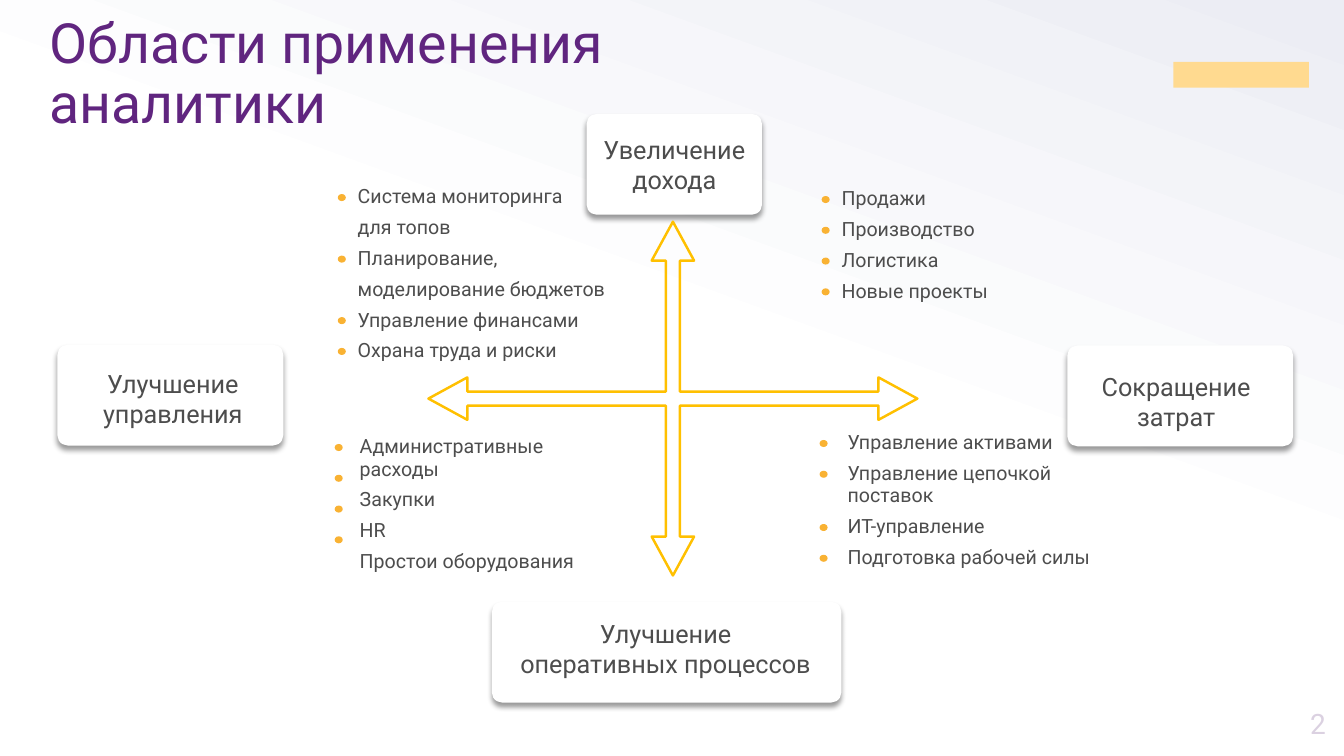
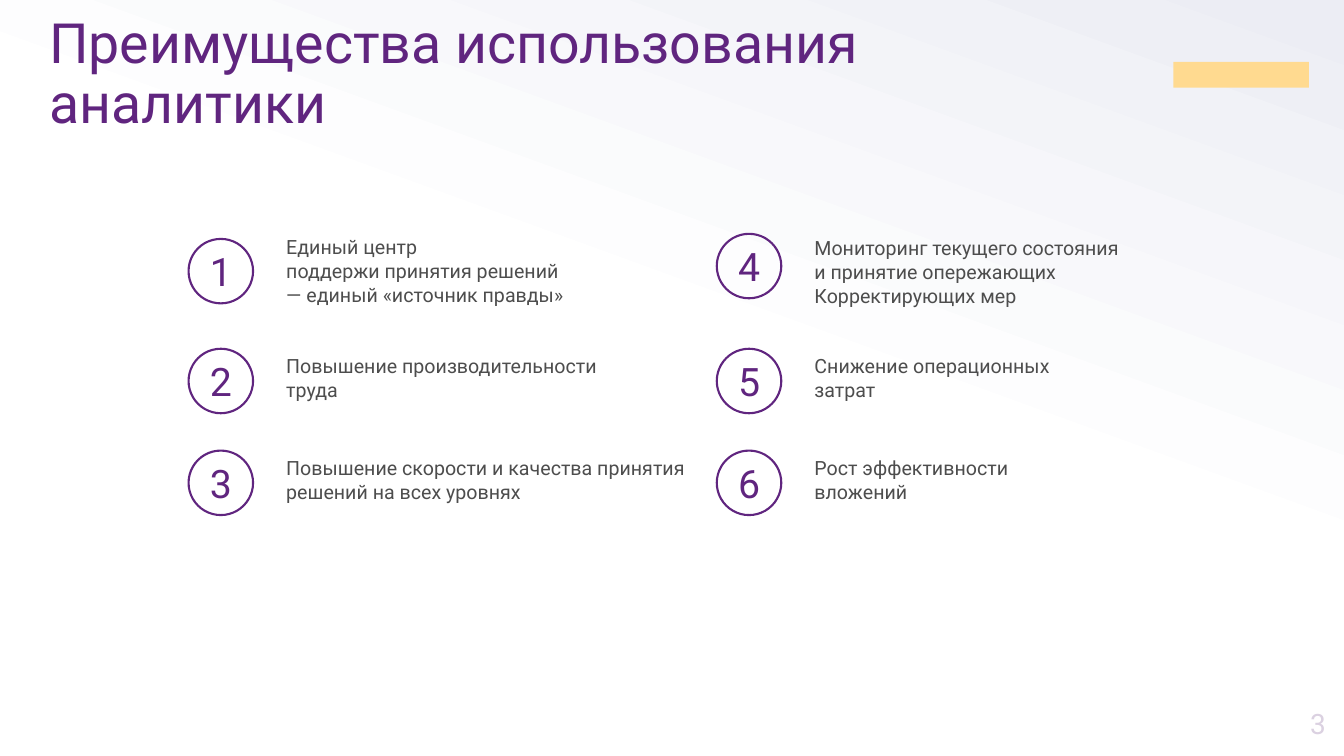
from dataclasses import dataclass

from lxml import etree
from pptx import Presentation
from pptx.dml.color import RGBColor
from pptx.enum.shapes import MSO_SHAPE
from pptx.enum.text import MSO_ANCHOR, PP_ALIGN
from pptx.oxml.ns import qn
from pptx.util import Inches, Pt

LEFT, CENTER, RIGHT = PP_ALIGN.LEFT, PP_ALIGN.CENTER, PP_ALIGN.RIGHT
TOP, MIDDLE = MSO_ANCHOR.TOP, MSO_ANCHOR.MIDDLE
CARD, CIRCLE, CROSS = MSO_SHAPE.ROUNDED_RECTANGLE, MSO_SHAPE.OVAL, MSO_SHAPE.QUAD_ARROW
BAR = MSO_SHAPE.RECTANGLE

WIDTH, HEIGHT = Inches(13.33), Inches(7.5)
PITCH = 4.07
CARD_HEIGHT = 13.33


@dataclass(frozen=True)
class Theme:
    font: str = "Roboto"
    title: str = "60257F"
    body: str = "4D4D4D"
    corner: str = "FFDA90"
    page: str = "DBD1E1"
    dot: str = "F9B233"
    arrow: str = "FFC000"
    white: str = "FFFFFF"
    tint: str = "ECEDF4"
    shadow: str = "000000"
    title_size: float = 39.6
    badge_size: float = 28
    page_size: float = 20
    card_size: float = 18
    body_size: float = 14


T = Theme()

CARDS = [
    (36.6, 79.6, 26, -0.08, -0.47, "Улучшение\nоперативных процессов"),
    (79.42, 45.7, 16.8, -0.3, 0.73, "Сокращение\nзатрат"),
    (43.65, 15.07, 13.05, 0, 0, "Увеличение\nдохода"),
    (4.28, 45.6, 16.8, 0.19, 0.47, "Улучшение\nуправления"),
]

LISTS = [
    (25.88, 23.87, 0.75, (0, 2, 4, 5),
     "Система мониторинга\nдля топов\nПланирование,\nмоделирование бюджетов\n"
     "Управление финансами\nОхрана труда и риски"),
    (26.03, 56.93, 1.13, (0, 1, 2, 3),
     "Административные расходы\nЗакупки\nHR\nПростои оборудования"),
    (62.33, 56.4, 1.35, (0, 1, 2.73, 3.73),
     "Управление активами\nУправление цепочкой поставок\nИТ-управление\n"
     "Подготовка рабочей силы"),
    (61.88, 24.13, 0.75, (0, 1, 2, 3),
     "Продажи\nПроизводство\nЛогистика\nНовые проекты"),
]

BENEFIT_COLUMNS = (14.03, 53.33)
BENEFITS = [
    (0, 31.6, 30.4, 27.98,
     "Единый центр\nподдержи принятия решений\n— единый «источник правды»"),
    (0, 46.13, 46.13, 27.98, "Повышение производительности труда"),
    (0, 59.6, 59.6, 32.18,
     "Повышение скорости и качества принятия решений на всех уровнях"),
    (1, 30.93, 30.53, 32.18,
     "Мониторинг текущего состояния\nи принятие опережающих\nКорректирующих мер"),
    (1, 46.13, 46.13, 32.18, "Снижение операционных\nзатрат"),
    (1, 59.6, 59.6, 32.18, "Рост эффективности\nвложений"),
]


def across(share):
    return round(WIDTH * share / 100)


def down(share):
    return round(HEIGHT * share / 100)


def box(x, y, w, h):
    return across(x), down(y), across(w), down(h)


def rgb(color):
    return RGBColor.from_string(color)


def write(tf, text, size, color, align=LEFT, anchor=TOP, spacing=None, after=0):
    tf.word_wrap = True
    tf.vertical_anchor = anchor
    for i, line in enumerate(text.split("\n")):
        p = tf.paragraphs[0] if i == 0 else tf.add_paragraph()
        p.text = line
        p.alignment = align
        p.line_spacing = spacing
        p.space_after = Pt(after)
        p.font.name = T.font
        p.font.size = Pt(size)
        p.font.color.rgb = rgb(color)


def add_text(s, area, text, size, color, **style):
    write(s.shapes.add_textbox(*box(*area)).text_frame, text, size, color, **style)


def add_shape(s, kind, area, fill=None, line=None, weight=1):
    sp = s.shapes.add_shape(kind, *box(*area))
    sp.shadow.inherit = False
    if fill:
        sp.fill.solid()
        sp.fill.fore_color.rgb = rgb(fill)
    else:
        sp.fill.background()
    if line:
        sp.line.color.rgb = rgb(line)
        sp.line.width = Pt(weight)
    else:
        sp.line.fill.background()
    return sp


def drop_shadow(sp):
    effects = sp._element.spPr.find(qn("a:effectLst"))
    shadow = etree.SubElement(effects, qn("a:outerShdw"), blurRad=str(Pt(4)),
                              dist=str(Pt(3)), dir="5400000", algn="t", rotWithShape="0")
    color = etree.SubElement(shadow, qn("a:srgbClr"), val=T.shadow)
    etree.SubElement(color, qn("a:alpha"), val="40000")


def add_card(s, x, y, w, dx, dy, text):
    sp = add_shape(s, CARD, (x, y, w, CARD_HEIGHT), fill=T.white)
    sp.adjustments[0] = 0.1
    drop_shadow(sp)
    tf = sp.text_frame
    tf.margin_left, tf.margin_right = across(0.75 + dx), across(0.75 - dx)
    tf.margin_top, tf.margin_bottom = down(0.75 + dy), down(0.75 - dy)
    write(tf, text, T.card_size, T.body, align=CENTER, anchor=MIDDLE)


def add_dotted_list(s, x, y, gap, rows, text):
    add_text(s, (x, y, 21, PITCH * (rows[-1] + 2)), text, T.body_size, T.body,
             spacing=Pt(16), after=6)
    for row in rows:
        add_shape(s, CIRCLE, (x - gap, y + 1.8 + PITCH * row, 0.6, 0.93), fill=T.dot)


def add_benefit(s, number, column, badge_y, text_y, w, text):
    x = BENEFIT_COLUMNS[column]
    sp = add_shape(s, CIRCLE, (x, badge_y, 4.8, 8.53), line=T.title, weight=1.5)
    tf = sp.text_frame
    tf.margin_left = tf.margin_right = tf.margin_top = tf.margin_bottom = 0
    write(tf, str(number), T.badge_size, T.title, align=CENTER, anchor=MIDDLE)
    add_text(s, (x + 6.53, text_y, w, 8), text, T.body_size, T.body, spacing=Pt(17))


def set_background(prs):
    fill = prs.slide_master.background.fill
    fill.gradient()
    fill.gradient_angle = 250
    for stop, color, position in zip(fill.gradient_stops, (T.tint, T.white), (0, 0.47)):
        stop.color.rgb = rgb(color)
        stop.position = position


def add_slide(prs, title, title_width, page):
    s = prs.slides.add_slide(prs.slide_layouts[6])
    add_text(s, (2.93, 6, title_width, 8), title, T.title_size, T.title,
             anchor=MIDDLE, spacing=0.9)
    add_shape(s, BAR, (87.3, 8.2, 10.1, 3.4), fill=T.corner)
    add_text(s, (96.6, 93.07, 2.78, 5.33), str(page), T.page_size, T.page,
             align=RIGHT, anchor=MIDDLE)
    return s


def build_areas(prs):
    s = add_slide(prs, "Области применения аналитики", 62.93, 2)
    for card in CARDS:
        add_card(s, *card)
    for items in LISTS:
        add_dotted_list(s, *items)
    sp = add_shape(s, CROSS, (31.88, 29.33, 36.38, 46.8), line=T.arrow, weight=1.75)
    for i, value in enumerate((0.04, 0.06, 0.11)):
        sp.adjustments[i] = value


def build_benefits(prs):
    s = add_slide(prs, "Преимущества использования аналитики", 82.28, 3)
    for number, benefit in enumerate(BENEFITS, 1):
        add_benefit(s, number, *benefit)


def main():
    prs = Presentation()
    prs.slide_width, prs.slide_height = WIDTH, HEIGHT
    set_background(prs)
    build_areas(prs)
    build_benefits(prs)
    prs.save("out.pptx")


if __name__ == "__main__":
    main()
